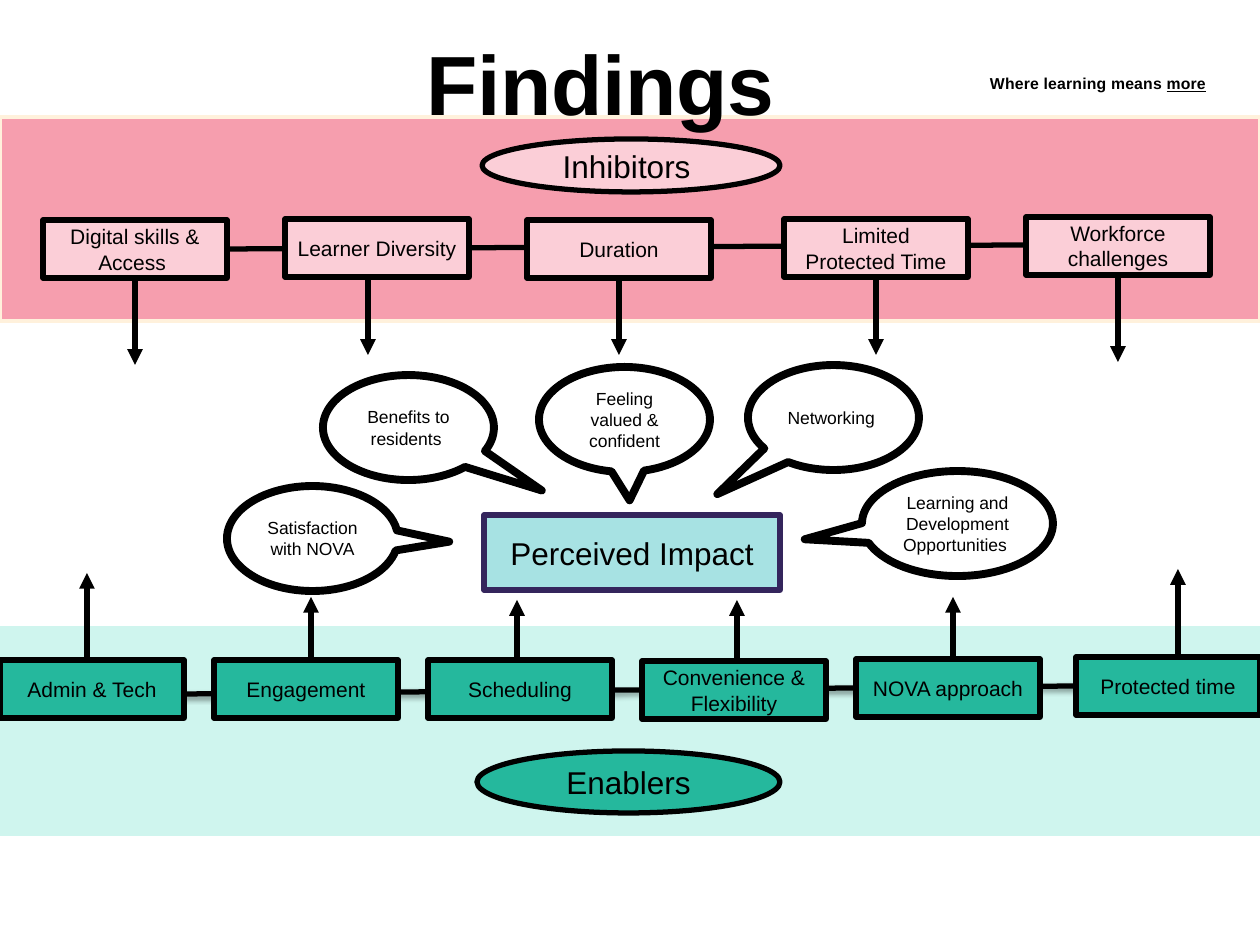
from dataclasses import dataclass

from pptx import Presentation, util as u
from pptx.dml.color import RGBColor
from pptx.enum import shapes, text
from pptx.oxml.ns import qn
from lxml import etree

PX = 914400 / 126


@dataclass(frozen=True)
class Theme:
    font: str = "Arial"
    ink: str = "000000"
    paper: str = "FFFFFF"
    pink_band: str = "F69EAE"
    pink_edge: str = "FFF1DC"
    pink_box: str = "FBCED7"
    green_band: str = "CFF5EE"
    green_box: str = "25B89D"
    impact: str = "A7E2E3"
    impact_edge: str = "34255C"
    title: int = 48
    heading: int = 18
    label: int = 12
    quote: int = 10
    tagline: int = 9


THEME = Theme()
BOX_WIDTH, BOX_HEIGHT = 184, 58

# left, top, text, arrow x, arrow tip y
INHIBITORS = [
    (43, 220, "Digital skills & Access ", 135, 365),
    (285, 219, "Learner Diversity", 368, 355),
    (527, 220, "Duration", 619, 355),
    (784, 219, "Limited Protected Time", 876, 355),
    (1026, 217, "Workforce challenges", 1118, 362),
]
ENABLERS = [
    (0, 660, "Admin & Tech", 87, 573),
    (214, 660, "Engagement", 311, 597),
    (428, 660, "Scheduling", 517, 600),
    (642, 661, "Convenience & Flexibility", 737, 600),
    (856, 659, "NOVA approach", 953, 597),
    (1076, 657, "Protected time", 1178, 569),
]
# left, top, width, text, pointer offset as a share of width and height
QUOTES = [
    (862, 471, 191, "Learning and Development Opportunities ", -0.8, 0.15),
    (227, 486, 171, "Satisfaction with NOVA", 0.8, 0.03),
    (539, 367, 171, "Feeling valued & confident", 0.03, 0.77),
    (323, 375, 171, "Benefits to residents ", 0.78, 0.6),
    (748, 365, 171, "Networking ", -0.68, 0.73),
]


def px(*values):
    return [u.Emu(round(value * PX)) for value in values]


def color(value):
    return RGBColor.from_string(value)


def write_text(shape, content, size, bold=False, underlined="", spacing=0,
               align=text.PP_ALIGN.CENTER, anchor=text.MSO_ANCHOR.MIDDLE, wrap=True):
    """Write one paragraph; `underlined` follows the content, spacing is in 1/100 pt."""
    frame = shape.text_frame
    frame.word_wrap = wrap
    frame.vertical_anchor = anchor
    paragraph = frame.paragraphs[0]
    paragraph.alignment = align
    for part, underline in ((content, None), (underlined, True)):
        if not part:
            continue
        run = paragraph.add_run()
        run.text = part
        run.font.name = THEME.font
        run.font.size = u.Pt(size)
        run.font.bold = bold
        run.font.underline = underline
        run.font.color.rgb = color(THEME.ink)
        if spacing:
            run.font._element.set("spc", str(spacing))


def add_figure(slide, kind, box, fill, line=THEME.ink, weight=3):
    shape = slide.shapes.add_shape(kind, *px(*box))
    shape.shadow.inherit = False
    shape.fill.solid()
    shape.fill.fore_color.rgb = color(fill)
    shape.line.color.rgb = color(line)
    shape.line.width = u.Pt(weight)
    return shape


def add_line(slide, start, end, arrow=False, shadow=False):
    line = slide.shapes.add_connector(shapes.MSO_CONNECTOR.STRAIGHT, *px(*start, *end))
    line.line.color.rgb = color(THEME.ink)
    line.line.width = u.Pt(3)
    properties = line._element.spPr
    if arrow:
        etree.SubElement(properties.find(qn("a:ln")), qn("a:tailEnd"), type="triangle")
    effects = etree.SubElement(properties, qn("a:effectLst"))
    if shadow:
        outer = etree.SubElement(effects, qn("a:outerShdw"), blurRad=str(u.Pt(3.1)),
                                 dist=str(u.Pt(1.6)), dir="5400000", rotWithShape="0")
        tint = etree.SubElement(outer, qn("a:srgbClr"), val=THEME.ink)
        etree.SubElement(tint, qn("a:alpha"), val="38000")


def add_boxes(slide, factors, fill):
    for left, top, label, _, _ in factors:
        box = add_figure(slide, shapes.MSO_SHAPE.RECTANGLE,
                         (left, top, BOX_WIDTH, BOX_HEIGHT), fill)
        write_text(box, label, THEME.label)


def add_arrows(slide, factors):
    """Point from each box towards the middle of the slide."""
    for _, top, _, x, tip in factors:
        start = top if tip < top else top + BOX_HEIGHT
        add_line(slide, (x, start), (x, tip), arrow=True)


def add_quotes(slide):
    for left, top, width, quote, dx, dy in QUOTES:
        bubble = add_figure(slide, shapes.MSO_SHAPE.OVAL_CALLOUT,
                            (left, top, width, 105), THEME.paper, weight=4.5)
        bubble.adjustments[0] = dx
        bubble.adjustments[1] = dy
        write_text(bubble, quote, THEME.quote)


def add_heading(slide, kind, box, label, fill, line=THEME.ink):
    write_text(add_figure(slide, kind, box, fill, line), label, THEME.heading)


def add_tagline(slide):
    box = slide.shapes.add_textbox(*px(990, 74, 218, 19))
    frame = box.text_frame
    frame.margin_left = frame.margin_right = frame.margin_top = frame.margin_bottom = 0
    write_text(box, "Where learning means ", THEME.tagline, bold=True, underlined="more",
               spacing=10, align=text.PP_ALIGN.LEFT, anchor=text.MSO_ANCHOR.TOP, wrap=False)


def format_title(slide):
    title = slide.shapes.title
    title.left, title.top, title.width, title.height = px(23, 19, 1155, 88)
    title.text_frame.auto_size = text.MSO_AUTO_SIZE.NONE
    title.text_frame.margin_top = px(13)[0]
    write_text(title, "Findings", THEME.title, bold=True, spacing=-20,
               anchor=text.MSO_ANCHOR.TOP)
    slide.shapes._spTree.append(title._element)  # in front of the pink band


def main():
    presentation = Presentation()
    presentation.slide_width, presentation.slide_height = px(1260, 945)
    slide = presentation.slides.add_slide(presentation.slide_layouts[5])
    rectangle, oval = shapes.MSO_SHAPE.RECTANGLE, shapes.MSO_SHAPE.OVAL

    add_tagline(slide)
    add_figure(slide, rectangle, (0, 117, 1260, 204), THEME.pink_band, THEME.pink_edge, 2)
    add_line(slide, (227, 249), (1026, 245))
    add_heading(slide, rectangle, (484, 515, 296, 75), "Perceived Impact",
                THEME.impact, THEME.impact_edge)
    add_quotes(slide)
    add_figure(slide, rectangle, (0, 629, 1260, 204), THEME.green_band, THEME.green_band)
    add_boxes(slide, INHIBITORS, THEME.pink_box)
    add_heading(slide, oval, (482, 139, 298, 53), "Inhibitors ", THEME.pink_box)
    add_heading(slide, oval, (477, 751, 303, 62), "Enablers", THEME.green_box)
    add_line(slide, (184, 694), (1076, 686), shadow=True)
    add_boxes(slide, ENABLERS, THEME.green_box)
    add_arrows(slide, INHIBITORS)
    add_arrows(slide, ENABLERS)
    format_title(slide)
    presentation.save("out.pptx")


if __name__ == "__main__":
    main()
